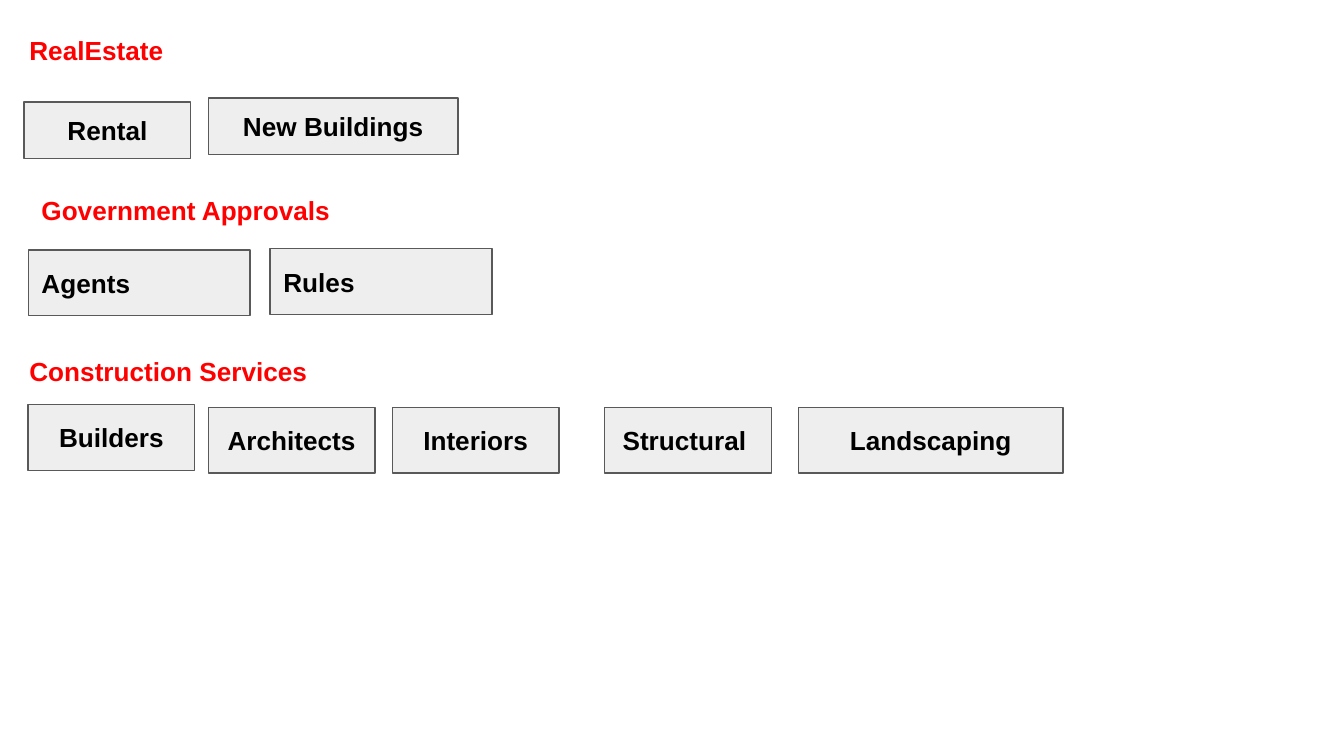
from pptx import Presentation
from pptx.dml.color import RGBColor as RGB
from pptx.enum.shapes import MSO_SHAPE as Shape
from pptx.enum.text import MSO_ANCHOR as Anchor, PP_ALIGN as Align
from pptx.util import Inches, Pt

THEME = {
    "font": {"name": "Arial", "size": Pt(14), "bold": True},
    "heading": RGB(0xFF, 0x00, 0x00),
    "heading_fill": RGB(0xFF, 0xFF, 0xFF),
    "text": RGB(0x00, 0x00, 0x00),
    "box_fill": RGB(0xEE, 0xEE, 0xEE),
    "box_line": RGB(0x59, 0x59, 0x59),
    "line_width": Pt(0.75),
}
SLIDE_WIDTH = 10
SLIDE_HEIGHT = SLIDE_WIDTH * 9 / 16  # widescreen
HEADING_SIZE = (2.62, 0.32)
INSET = Inches(0.1)

# Each box: label, left, top, width
SECTIONS = [
    {"title": "RealEstate", "at": (0.12, 0.21), "height": 0.42, "align": Align.CENTER,
     "boxes": [("Rental", 0.18, 0.76, 1.24), ("New Buildings", 1.55, 0.73, 1.86)]},
    {"title": "Government Approvals", "at": (0.21, 1.4), "height": 0.49, "align": Align.LEFT,
     "boxes": [("Agents", 0.21, 1.86, 1.65), ("Rules", 2.01, 1.85, 1.65)]},
    {"title": "Construction Services", "at": (0.12, 2.6), "height": 0.49, "align": Align.CENTER,
     "boxes": [("Builders", 0.21, 3.01, 1.24), ("Architects", 1.55, 3.03, 1.24),
               ("Interiors", 2.92, 3.03, 1.24), ("Structural ", 4.5, 3.03, 1.24),
               ("Landscaping", 5.94, 3.03, 1.97)]},
]


def add_label(slide, text, at, fill, color, align, line=None):
    sp = slide.shapes.add_shape(Shape.RECTANGLE, *map(Inches, at))
    sp.shadow.inherit = False
    sp.fill.solid()
    sp.fill.fore_color.rgb = fill
    if line is None:
        sp.line.fill.background()
    else:
        sp.line.color.rgb = line
        sp.line.width = THEME["line_width"]

    tf = sp.text_frame
    frame = {"word_wrap": True, "vertical_anchor": Anchor.MIDDLE}
    frame.update({f"margin_{side}": INSET for side in ("left", "top", "right", "bottom")})
    for key, value in frame.items():
        setattr(tf, key, value)

    p = tf.paragraphs[0]
    p.alignment = align
    r = p.add_run()
    r.text = text
    for key, value in THEME["font"].items():
        setattr(r.font, key, value)
    r.font.color.rgb = color


prs = Presentation()
prs.slide_width, prs.slide_height = Inches(SLIDE_WIDTH), Inches(SLIDE_HEIGHT)
s = prs.slides.add_slide(prs.slide_layouts[6])

for section in SECTIONS:
    # Section heading
    add_label(s, section["title"], section["at"] + HEADING_SIZE,
              THEME["heading_fill"], THEME["heading"], Align.LEFT)
    # Service boxes
    for label, left, top, width in section["boxes"]:
        add_label(s, label, (left, top, width, section["height"]),
                  THEME["box_fill"], THEME["text"], section["align"], THEME["box_line"])

prs.save("out.pptx")
